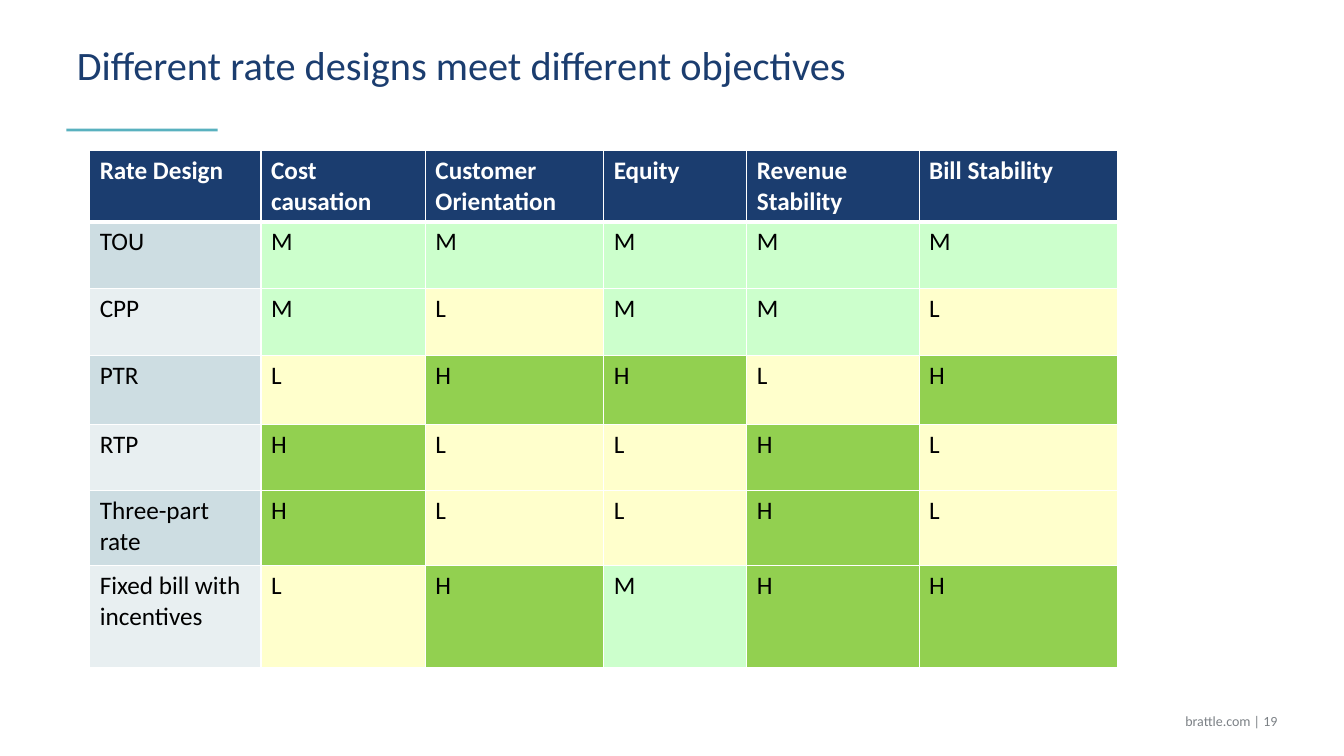
from lxml.etree import SubElement
from pptx import Presentation
from pptx.dml.color import RGBColor
from pptx.enum.shapes import MSO_CONNECTOR as Connector
from pptx.enum.text import MSO_ANCHOR as Anchor, MSO_AUTO_SIZE as AutoSize, PP_ALIGN as Align
from pptx.oxml.ns import qn
from pptx.util import Pt

NAVY, TEAL, GREY, WHITE, BLACK = "1B3D6F", "2297AA", "7C8186", "FFFFFF", "000000"
ROW_BANDS = ("CDDDE2", "E8EFF1")
RATING_FILLS = {"H": "92D050", "M": "CCFFCC", "L": "FFFFCC"}

OBJECTIVES = ["Rate Design", "Cost causation", "Customer Orientation", "Equity",
              "Revenue Stability", "Bill Stability"]
RATINGS = {
    "TOU": "MMMMM",
    "CPP": "MLMML",
    "PTR": "LHHLH",
    "RTP": "HLLHL",
    "Three-part rate": "HLLHL",
    "Fixed bill with incentives": "LHMHH",
}
COLUMN_WIDTHS = [122.4, 117.4, 127.4, 102.2, 123.1, 142]
ROW_HEIGHTS = [51.1, 47.5, 48.2, 49, 47.5, 53.3, 73.4]


def color(hex_code):
    return RGBColor.from_string(hex_code)


def set_all(target, values):
    for name, value in values.items():
        setattr(target, name, value)


def write(frame, text, size, hex_code, bold=False, align=Align.LEFT, spacing=None):
    paragraph = frame.paragraphs[0]
    set_all(paragraph, {"alignment": align, "line_spacing": spacing})
    run = paragraph.add_run()
    run.text = text
    set_all(run.font, {"name": "Calibri", "size": Pt(size), "bold": bold})
    run.font.color.rgb = color(hex_code)


def add_title(slide, text):
    title = slide.shapes.title
    set_all(title, {"left": Pt(49), "top": Pt(32.4), "width": Pt(879), "height": Pt(38.2)})
    set_all(title.text_frame, {
        "word_wrap": True, "auto_size": AutoSize.NONE, "vertical_anchor": Anchor.BOTTOM,
        "margin_left": Pt(5.8), "margin_top": Pt(3.6),
        "margin_right": Pt(7.2), "margin_bottom": Pt(7.2)})
    write(title.text_frame, text, 28.8, NAVY, spacing=0.8)


def add_accent_rule(slide):
    rule = slide.shapes.add_connector(
        Connector.STRAIGHT, Pt(47.5), Pt(92.9), Pt(155.5), Pt(92.9))
    rule.line.width = Pt(2)
    rule.line.color.rgb = color(TEAL)
    # 75% opacity and no shadow
    tint = rule.element.xpath(".//a:ln//a:srgbClr")[0]
    SubElement(tint, qn("a:alpha"), val="75000")
    SubElement(rule.element.spPr, qn("a:effectLst"))


def add_footer(slide, text):
    footer = slide.shapes.add_textbox(Pt(805), Pt(500.4), Pt(114.5), Pt(28.8)).text_frame
    set_all(footer, {"word_wrap": True, "vertical_anchor": Anchor.MIDDLE})
    write(footer, text, 10, GREY, align=Align.RIGHT)


def add_borders(cell, top, bottom):
    properties = cell._tc.get_or_add_tcPr()
    for side, width in (("L", 1), ("R", 1), ("T", top), ("B", bottom)):
        border = SubElement(properties, qn(f"a:ln{side}"), w=str(Pt(width)))
        SubElement(SubElement(border, qn("a:solidFill")), qn("a:srgbClr"), val=WHITE)


def add_rating_table(slide):
    rows = [OBJECTIVES] + [[design, *marks] for design, marks in RATINGS.items()]
    table = slide.shapes.add_table(
        len(rows), len(OBJECTIVES), Pt(64.1), Pt(107.3),
        Pt(sum(COLUMN_WIDTHS)), Pt(sum(ROW_HEIGHTS))).table
    for column, width in zip(table.columns, COLUMN_WIDTHS):
        column.width = Pt(width)
    for row, height in zip(table.rows, ROW_HEIGHTS):
        row.height = Pt(height)
    for r, texts in enumerate(rows):
        header = r == 0
        for c, text in enumerate(texts):
            cell = table.cell(r, c)
            # Thick divider between the header and the first design
            add_borders(cell, top=3 if r == 1 else 1, bottom=3 if header else 1)
            band = NAVY if header else ROW_BANDS[(r - 1) % 2]
            cell.fill.solid()
            cell.fill.fore_color.rgb = color(RATING_FILLS.get(text, band))
            write(cell.text_frame, text, 18, WHITE if header else BLACK, bold=header)


def main():
    deck = Presentation()
    set_all(deck, {"slide_width": Pt(960), "slide_height": Pt(540)})
    slide = deck.slides.add_slide(deck.slide_layouts[5])
    add_accent_rule(slide)
    add_title(slide, "Different rate designs meet different objectives")
    add_footer(slide, "brattle.com | 19")
    add_rating_table(slide)
    deck.save("out.pptx")


if __name__ == "__main__":
    main()
